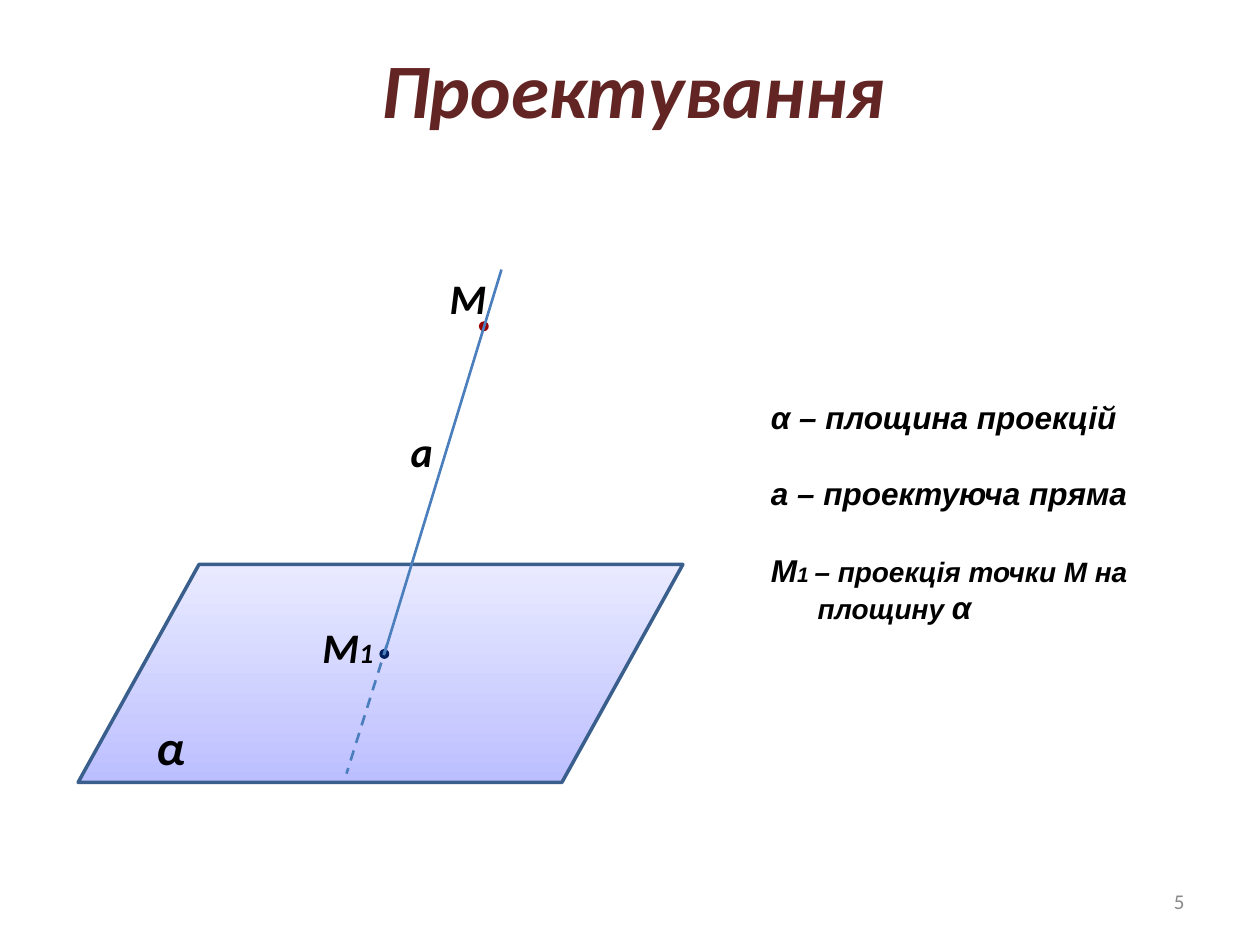
from lxml import etree
from pptx import Presentation
from pptx.dml.color import RGBColor
from pptx.enum import dml, shapes, text
from pptx.oxml.ns import qn
from pptx.util import Inches, Pt

COLORS = {
    "title": "632523", "text": "000000", "number": "898989",
    "plane_bottom": "BCBFFF", "plane_top": "E9EAFF", "plane_edge": "3A5F8C",
    "ray": "4B7EBC", "point": "990000", "projection": "002060",
}
# Each run is (text, size in points)
TITLE = [("Проектування", 44)]
NUMBER = [("5", 12)]
LABELS = [
    ((1.14, 5.64, 1.08, 0.57), [("α", 28)]),
    ((3.47, 2.11, 1.05, 0.5), [("М", 24)]),
    ((2.46, 4.88, 1.05, 0.5), [("М", 24), ("1", 16)]),
    ((3.16, 3.33, 0.32, 0.51), [("а", 24)]),
]
LEGEND = [
    [("α – площина проекцій", 18)],
    [("а – проектуюча пряма", 18)],
    [("М", 18), ("1 ", 12), ("– проекція точки М на площину ", 16), ("α", 18)],
]
PLANE = (0.62, 4.48, 4.8, 1.73)
POINTS = [((3.84, 2.59), "point"), ((3.05, 5.19), "projection")]
RAYS = [((3.98, 2.14), (3.05, 5.19), None),
        ((3.07, 5.12), (2.75, 6.14), dml.MSO_LINE.DASH)]
DOT = 0.05
HANGING = 0.37


def rgb(name):
    return RGBColor.from_string(COLORS[name])


def set_line(sp, color, width):
    sp.line.color.rgb = rgb(color)
    sp.line.width = Pt(width)


def add_text(s, box, paragraphs, color="text", font="Calibri", bold=True,
             align=text.PP_ALIGN.LEFT, anchor=text.MSO_ANCHOR.TOP):
    tf = s.shapes.add_textbox(*map(Inches, box)).text_frame
    tf.word_wrap = True
    tf.vertical_anchor = anchor
    for i, runs in enumerate(paragraphs):
        p = tf.paragraphs[0] if i == 0 else tf.add_paragraph()
        p.alignment = align
        for content, size in runs:
            r = p.add_run()
            r.text = content
            r.font.name, r.font.size = font, Pt(size)
            r.font.bold = r.font.italic = bold
            r.font.color.rgb = rgb(color)
    return tf


def add_plane(s):
    sp = s.shapes.add_shape(shapes.MSO_SHAPE.FLOWCHART_DATA, *map(Inches, PLANE))
    sp.shadow.inherit = False
    sp.fill.gradient()
    sp.fill.gradient_angle = 90
    for stop, color in zip(sp.fill.gradient_stops, ("plane_bottom", "plane_top")):
        stop.color.rgb = rgb(color)
    set_line(sp, "plane_edge", 2)


def add_point(s, center, color):
    x, y = center
    sp = s.shapes.add_shape(shapes.MSO_SHAPE.OVAL, Inches(x - DOT / 2),
                            Inches(y - DOT / 2), Inches(DOT), Inches(DOT))
    sp.shadow.inherit = False
    sp.fill.solid()
    sp.fill.fore_color.rgb = rgb(color)
    set_line(sp, color, 2)


def add_ray(s, start, end, dash):
    line = s.shapes.add_connector(shapes.MSO_CONNECTOR.STRAIGHT,
                                  *map(Inches, start + end))
    set_line(line, "ray", 1.5)
    if dash:
        line.line.dash_style = dash
    etree.SubElement(line._element.spPr, qn("a:effectLst"))


def add_legend(s):
    tf = add_text(s, (6.02, 3.11, 3.54, 2.22), LEGEND, font="Arial")
    for p in tf.paragraphs[1:]:
        p.space_before = Pt(22)
    pPr = tf.paragraphs[-1]._p.get_or_add_pPr()
    pPr.set("marL", str(Inches(HANGING)))
    pPr.set("indent", str(-Inches(HANGING)))


def main():
    prs = Presentation()
    prs.slide_width, prs.slide_height = Inches(10), Inches(7.5)
    s = prs.slides.add_slide(prs.slide_layouts[6])
    middle = text.MSO_ANCHOR.MIDDLE
    add_text(s, (7.17, 6.95, 2.33, 0.4), [NUMBER], "number", bold=False,
             align=text.PP_ALIGN.RIGHT, anchor=middle)
    add_text(s, (0.53, 0.07, 9, 1.25), [TITLE], "title",
             align=text.PP_ALIGN.CENTER, anchor=middle)
    add_plane(s)
    for box, runs in LABELS:
        add_text(s, box, [runs])
    for center, color in POINTS:
        add_point(s, center, color)
    for start, end, dash in RAYS:
        add_ray(s, start, end, dash)
    add_legend(s)
    prs.save("out.pptx")


if __name__ == "__main__":
    main()
